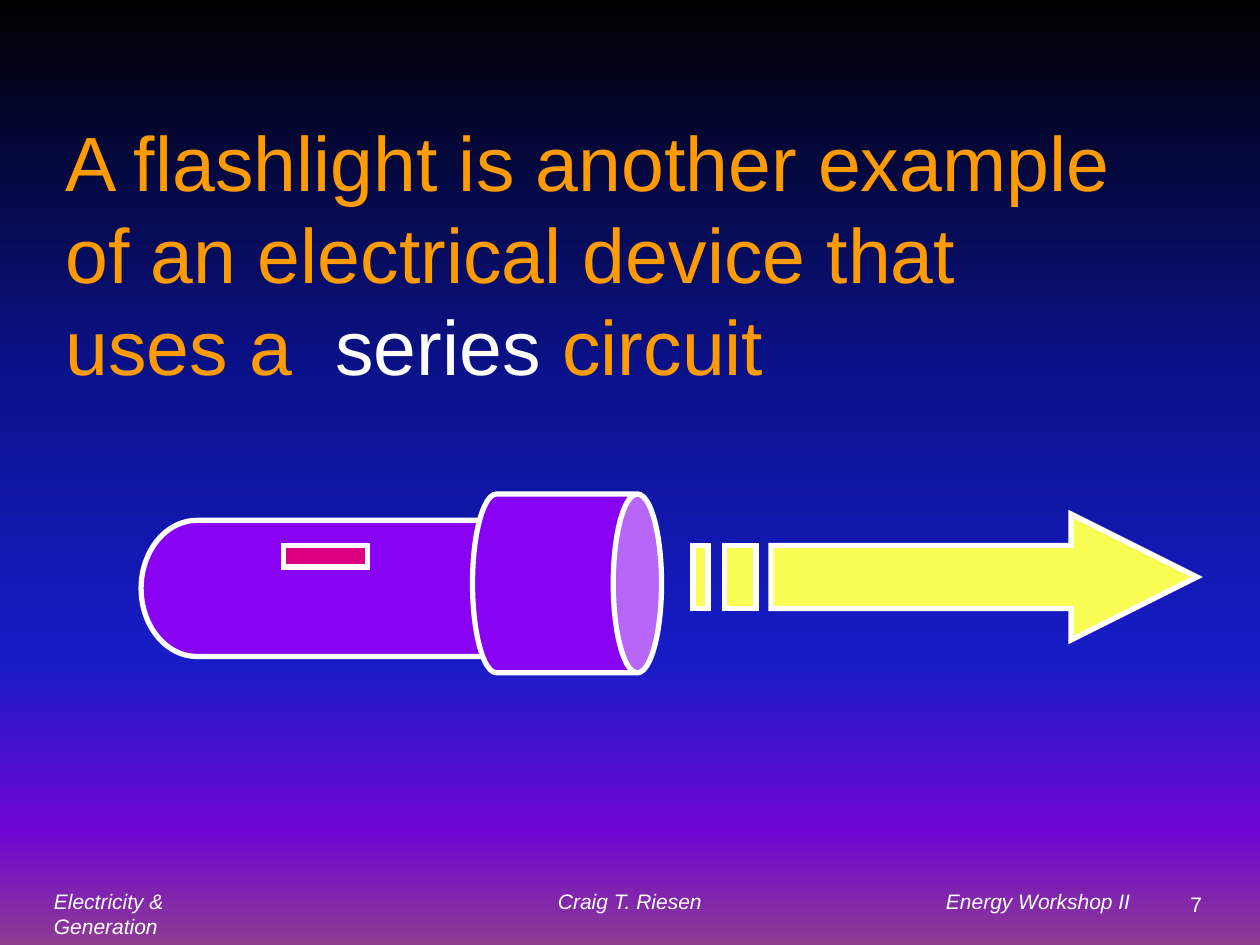
from dataclasses import dataclass

from pptx import Presentation, util as u
from pptx.dml.color import RGBColor
from pptx.enum import shapes, text
from pptx.oxml import ns
from lxml import etree


@dataclass(frozen=True)
class Theme:
    font: str = "Arial"
    title: str = "FE9B03"
    white: str = "FFFFFF"
    body: str = "8901F3"
    beam: str = "FAFE54"
    switch: str = "DC0081"
    sky: tuple = ((0, "000000"), (40, "0A128C"), (70, "181CC7"),
                  (88, "7005D4"), (100, "8C3D91"))
    big: int = 44
    small: int = 12
    line: int = 3


def rgb(code):
    return RGBColor.from_string(code)


class Deck:
    """Holds the theme and the current slide, and draws on it."""

    def __init__(self, theme):
        self.theme = theme
        self.file = Presentation()
        self.file.slide_width = u.Inches(10)
        self.file.slide_height = u.Inches(7.5)
        self.slide = self.file.slides.add_slide(self.file.slide_layouts[5])

    def sky(self):
        fill = self.slide.background.fill
        fill.gradient()
        fill.gradient_angle = 270
        stops = self.slide.element.xpath(".//a:gsLst")[0]
        for old in list(stops):
            stops.remove(old)
        for pos, code in self.theme.sky:
            stop = etree.SubElement(stops, ns.qn("a:gs"), pos=str(pos * 1000))
            etree.SubElement(stop, ns.qn("a:srgbClr"), val=code)

    def title(self, box, runs):
        shape = self.slide.shapes.title
        shape.left, shape.top, shape.width, shape.height = map(u.Inches, box)
        frame = shape.text_frame
        frame.word_wrap = True
        frame.auto_size = text.MSO_AUTO_SIZE.NONE
        frame.vertical_anchor = text.MSO_ANCHOR.MIDDLE
        para = frame.paragraphs[0]
        para.alignment = text.PP_ALIGN.LEFT
        for words, code in runs:
            run = para.add_run()
            run.text = words
            run.font.name = self.theme.font
            run.font.size = u.Pt(self.theme.big)
            run.font.color.rgb = rgb(code)

    def note(self, box, words, italic=True):
        frame = self.slide.shapes.add_textbox(*map(u.Inches, box)).text_frame
        frame.word_wrap = True
        para = frame.paragraphs[0]
        para.text = words
        font = para.font
        font.name, font.size = self.theme.font, u.Pt(self.theme.small)
        font.italic = italic
        font.color.rgb = rgb(self.theme.white)

    def paint(self, shape, code):
        shape.shadow.inherit = False
        shape.fill.solid()
        shape.fill.fore_color.rgb = rgb(code)
        shape.line.color.rgb = rgb(self.theme.white)
        shape.line.width = u.Pt(self.theme.line)
        edge = shape.line._get_or_add_ln()
        etree.SubElement(edge, ns.qn("a:miter"), lim="800000")

    def rect(self, box, code):
        kind = shapes.MSO_SHAPE.RECTANGLE
        self.paint(self.slide.shapes.add_shape(kind, *map(u.Inches, box)), code)

    def can(self, box, bend, code):
        """Draw a can turned to lie on its side; box is its place before the turn."""
        kind = shapes.MSO_SHAPE.CAN
        shape = self.slide.shapes.add_shape(kind, *map(u.Inches, box))
        shape.rotation = 90
        shape.adjustments[0] = bend
        self.paint(shape, code)

    def outline(self, loops, code):
        """Draw closed loops of points, given in inches, as one shape."""
        first, *rest = [[(u.Inches(x), u.Inches(y)) for x, y in loop]
                        for loop in loops]
        pen = self.slide.shapes.build_freeform(*first[0])
        pen.add_line_segments(first[1:], close=True)
        for loop in rest:
            pen.move_to(*loop[0])
            pen.add_line_segments(loop[1:], close=True)
        self.paint(pen.convert_to_shape(), code)


def bar(left, right, top=4.33, base=4.83):
    return [(left, top), (left, base), (right, base), (right, top)]


def main():
    theme = Theme()
    deck = Deck(theme)
    deck.sky()

    deck.note((0.33, 7, 1.4, 0.5), "Electricity & Generation")
    deck.note((4.33, 7, 1.6, 0.3), "Craig T. Riesen")
    deck.note((7.41, 7, 1.8, 0.3), "Energy Workshop II")
    deck.note((9.35, 7.03, 0.4, 0.3), "7", italic=False)

    deck.title((0.42, 0.67, 8.67, 2.67), [
        ("A flashlight is another example of an electrical device that uses a  ",
         theme.title),
        ("series", theme.white),
        (" circuit", theme.title),
    ])

    deck.can((2.35, 2.9, 1.08, 3.54), 0.82, theme.body)
    deck.can((3.79, 3.88, 1.42, 1.5), 0.27, theme.body)
    arrow = [(8.5, 4.08), (8.5, 4.33), (6.12, 4.33), (6.12, 4.83),
             (8.5, 4.83), (8.5, 5.08), (9.5, 4.58)]
    deck.outline([arrow, bar(5.75, 6), bar(5.5, 5.62)], theme.beam)
    deck.rect((2.25, 4.33, 0.67, 0.17), theme.switch)

    deck.file.save("out.pptx")


if __name__ == "__main__":
    main()
